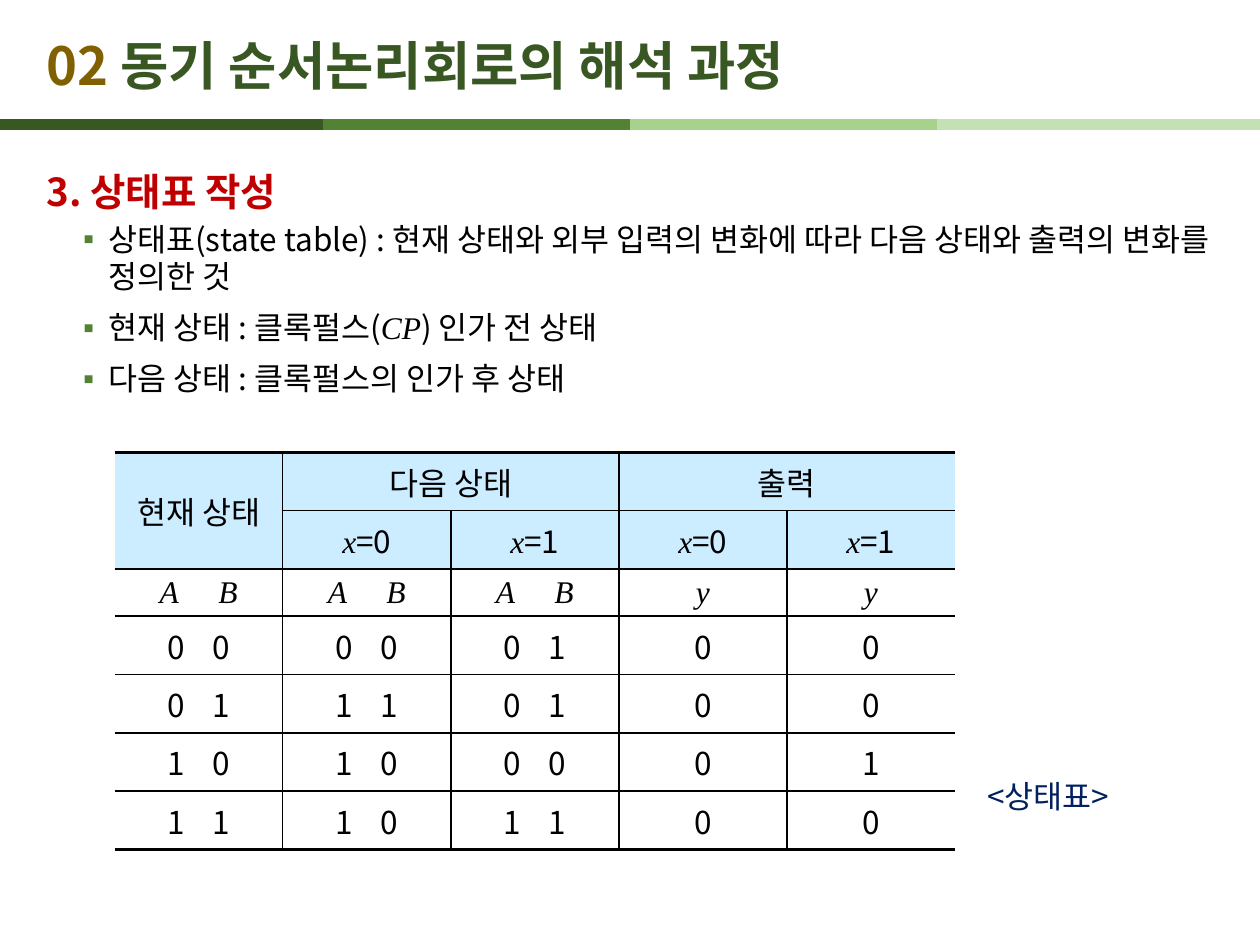
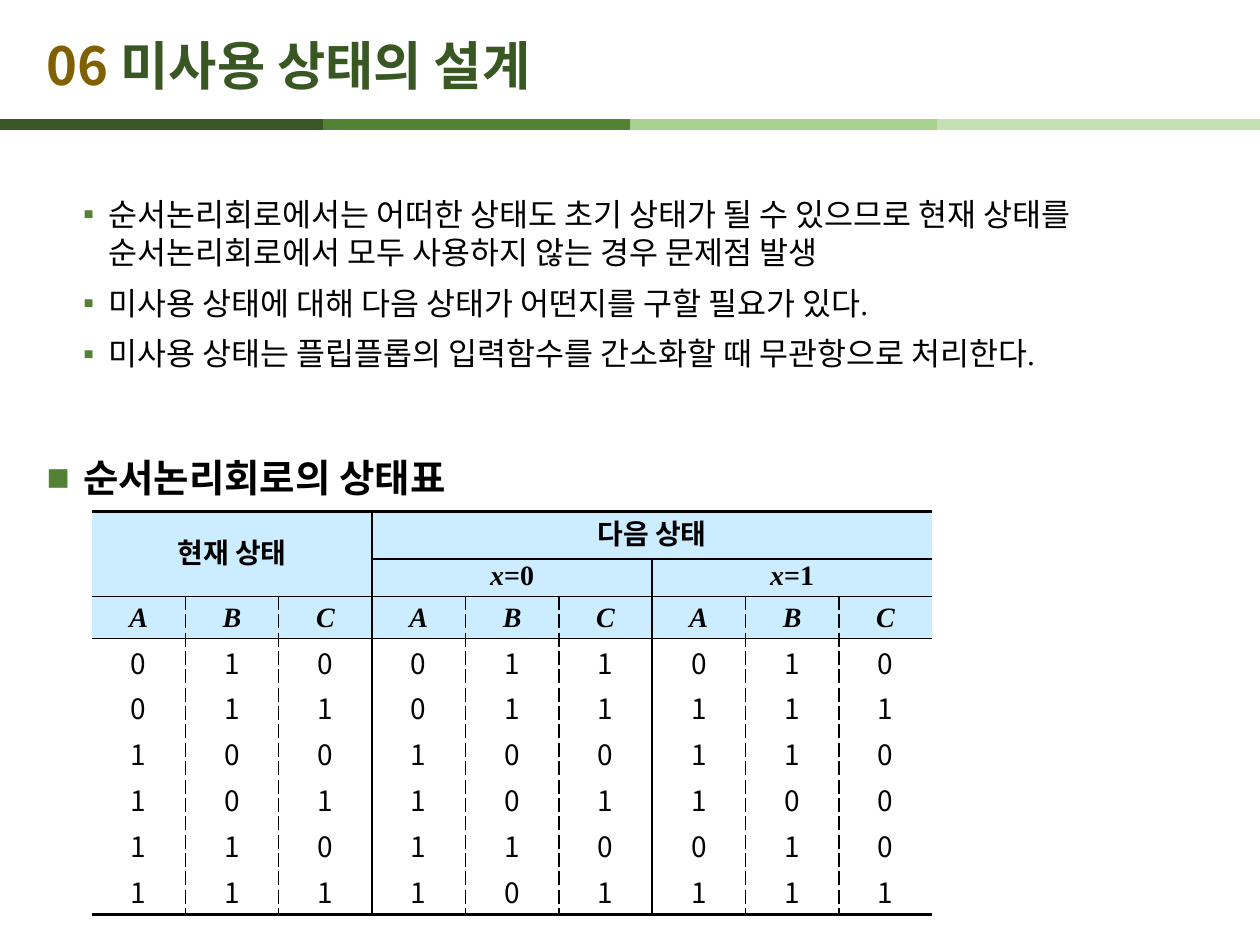
from lxml import etree
from pptx import Presentation, util as u
from pptx.dml.color import RGBColor
from pptx.enum import shapes, text
from pptx.oxml import ns

SANS, SERIF, ARIAL = "Noto Sans CJK KR", "Times New Roman", "Arial"
BLACK, RED, NAVY, BROWN = "000000", "C00000", "002060", "806000"
DARK_GREEN, GREEN, HEADER_BLUE = "385723", "548235", "CCECFF"
BANDS = [(0, DARK_GREEN), (25.6, GREEN), (50, "A9D18E"), (74.4, "C5E0B4")]
COLUMNS, ROWS = 100, 75
HEADING_LINE, ITEM_LINE = 41.5, 21.5


def color(value):
    return RGBColor.from_string(value)


def child(parent, tag, **attributes):
    return etree.SubElement(parent, ns.qn(tag), attributes)


def write(paragraph, content, size=18, ink=BLACK, font=SANS, bold=False, italic=False, gap=0):
    """Add one run; gap is the extra width in points after each character."""
    run = paragraph.add_run()
    run.text = content
    run.font.size, run.font.name = u.Pt(size), font
    run.font.bold, run.font.italic = bold, italic
    run.font.color.rgb = color(ink)
    properties = run.font._element
    if gap:
        properties.set("spc", str(gap * 100))
    child(properties, "a:ea", typeface=SANS)


def write_pair(paragraph, pair, gap, **style):
    first, second = pair
    write(paragraph, first, **style)
    write(paragraph, " ", gap=gap, **style)
    write(paragraph, second, **style)


def write_condition(paragraph, value, font, **style):
    write(paragraph, "x", font=SERIF, italic=True, **style)
    write(paragraph, f"={value}", font=font, **style)


def set_bullet(paragraph, symbol, margin, indent):
    properties = paragraph._p.get_or_add_pPr()
    properties.set("marL", str(u.Inches(margin)))
    properties.set("indent", str(u.Inches(indent)))
    if symbol:
        child(child(properties, "a:buClr"), "a:srgbClr", val=GREEN)
        child(properties, "a:buChar", char=symbol)
    else:
        child(properties, "a:buNone")


def set_border(cell, side, width, dashed=False):
    line = child(cell._tc.get_or_add_tcPr(), f"a:ln{side}", w=str(u.Pt(width)))
    if not width:
        child(line, "a:noFill")
        return
    child(child(line, "a:solidFill"), "a:srgbClr", val=BLACK)
    child(line, "a:prstDash", val="sysDash" if dashed else "solid")


class Deck:
    def __init__(self):
        self.presentation = Presentation()
        self.presentation.slide_width = u.Inches(10)
        self.presentation.slide_height = u.Inches(7.5)
        self.slide = None

    def x(self, columns):
        return round(self.presentation.slide_width * columns / COLUMNS)

    def y(self, rows):
        return round(self.presentation.slide_height * rows / ROWS)

    def place(self, shape, left, top, width, height):
        shape.left, shape.top = self.x(left), self.y(top)
        shape.width, shape.height = self.x(width), self.y(height)

    def start_slide(self, number, title):
        self.slide = self.presentation.slides.add_slide(self.presentation.slide_layouts[1])
        for left, ink in BANDS:
            self.band(left, ink)
        shape = self.slide.shapes.title
        self.place(shape, 2.7, 2.1, 82.7, 6)
        frame = shape.text_frame
        frame.auto_size = text.MSO_AUTO_SIZE.NONE
        frame.vertical_anchor = text.MSO_ANCHOR.MIDDLE
        paragraph = frame.paragraphs[0]
        paragraph.alignment = text.PP_ALIGN.LEFT
        write(paragraph, f"{number} ", size=30, ink=BROWN, bold=True)
        write(paragraph, title, size=30, ink=DARK_GREEN, bold=True)

    def band(self, left, ink):
        line = self.slide.shapes.add_connector(
            shapes.MSO_CONNECTOR.STRAIGHT,
            self.x(left), self.y(9.9), self.x(left + 25.6), self.y(9.9))
        line.line.color.rgb = color(ink)
        line.line.width = u.Pt(6)
        child(line._element.spPr, "a:effectLst")

    def body(self, top_inset=0.05):
        shape = self.slide.placeholders[1]
        self.place(shape, 2.7, 10.7, 94.5, 59.8)
        frame = shape.text_frame
        frame.auto_size = text.MSO_AUTO_SIZE.NONE
        frame.margin_top = u.Inches(top_inset)
        return frame

    def body_paragraph(self, frame, before, after, line):
        first = not frame.paragraphs[0].runs
        paragraph = frame.paragraphs[0] if first else frame.add_paragraph()
        paragraph.space_before = u.Pt(0 if first else before)
        paragraph.space_after = u.Pt(after)
        paragraph.line_spacing = u.Pt(line)
        return paragraph

    def heading(self, frame, content, ink=BLACK, symbol=None, before=0):
        paragraph = self.body_paragraph(frame, before, 0, HEADING_LINE)
        indent = 0.29 if symbol else 0
        set_bullet(paragraph, symbol, indent, -indent)
        write(paragraph, content, size=22, ink=ink, bold=True)

    def item(self, frame, *runs, font=SANS):
        """Add a bulleted line; a run in italics is given as (text, True)."""
        paragraph = self.body_paragraph(frame, 3.6, 4, ITEM_LINE)
        paragraph.level = 1
        set_bullet(paragraph, "▪", 0.49, -0.2)
        for content, italic in runs:
            write(paragraph, content, font=SERIF if italic else font, italic=italic)

    def caption(self, content, *box):
        shape = self.slide.shapes.add_textbox(0, 0, 0, 0)
        self.place(shape, *box)
        frame = shape.text_frame
        frame.word_wrap = True
        paragraph = frame.paragraphs[0]
        paragraph.alignment = text.PP_ALIGN.CENTER
        paragraph.line_spacing = u.Pt(ITEM_LINE)
        write(paragraph, content, ink=NAVY)

    def table(self, left, top, width, column_count, row_heights, merges,
              header_rows, insets, dash_group=1):
        """Add a ruled table; merges are (row, column, last row, last column)."""
        frame = self.slide.shapes.add_table(
            len(row_heights), column_count, self.x(left), self.y(top),
            self.x(width), self.y(sum(row_heights)))
        table = frame.table
        table.first_row = table.horz_banding = False
        for row, height in zip(table.rows, row_heights):
            row.height = self.y(height)
        for row, column, last_row, last_column in merges:
            table.cell(row, column).merge(table.cell(last_row, last_column))
        for row in range(len(row_heights)):
            for column in range(column_count):
                cell = table.cell(row, column)
                if not cell.is_spanned:
                    self.rule_cell(cell, row, column, table, dash_group)
                    self.format_cell(cell, row < header_rows, insets)
        return table

    def rule_cell(self, cell, row, column, table, dash_group):
        right, below = column + cell.span_width, row + cell.span_height
        for side, edge in (("L", column), ("R", right)):
            outer = edge in (0, len(table.columns))
            set_border(cell, side, 0 if outer else 1, edge % dash_group != 0)
        set_border(cell, "T", 1 if row else 2.25)
        set_border(cell, "B", 2.25 if below == len(table.rows) else 1)

    def format_cell(self, cell, header, insets):
        if header:
            cell.fill.solid()
            cell.fill.fore_color.rgb = color(HEADER_BLUE)
        else:
            cell.fill.background()
        cell.vertical_anchor = text.MSO_ANCHOR.MIDDLE
        cell.margin_left = cell.margin_right = u.Inches(insets[0])
        cell.margin_top = cell.margin_bottom = u.Inches(insets[1])
        cell.text_frame.paragraphs[0].alignment = text.PP_ALIGN.CENTER


def add_state_table_slide(deck):
    deck.start_slide("02", "동기 순서논리회로의 해석 과정")
    body = deck.body()
    deck.heading(body, "3. 상태표 작성", ink=RED)
    deck.item(body, ("상태표(state table) : 현재 상태와 외부 입력의 변화에 따라 "
                     "다음 상태와 출력의 변화를 정의한 것", False))
    deck.item(body, ("현재 상태 : 클록펄스(", False), ("CP", True), (") 인가 전 상태", False))
    deck.item(body, ("다음 상태 : 클록펄스의 인가 후 상태", False))

    table = deck.table(9.1, 35.9, 66.7, 5, [4.63, 4.63, 3.74] + [4.63] * 4,
                       [(0, 0, 1, 0), (0, 1, 0, 2), (0, 3, 0, 4)], 2, (0.1, 0.03))

    def paragraph_at(row, column):
        return table.cell(row, column).text_frame.paragraphs[0]

    for column, label in ((0, "현재 상태"), (1, "다음 상태"), (3, "출력")):
        write(paragraph_at(0, column), label, font=SERIF)
    for column in range(1, 5):
        write_condition(paragraph_at(1, column), (column - 1) % 2, SANS)
    for column in range(3):
        write_pair(paragraph_at(2, column), "AB", 18, font=SERIF, italic=True)
    for column in (3, 4):
        write(paragraph_at(2, column), "y", font=SERIF, italic=True)
    states = ["00 00 01 0 0", "01 11 01 0 0", "10 10 00 0 1", "11 10 11 0 0"]
    for row, state in enumerate(states, 3):
        for column, bits in enumerate(state.split()):
            if len(bits) == 2:
                write_pair(paragraph_at(row, column), bits, 12)
            else:
                write(paragraph_at(row, column), bits)
    deck.caption("<상태표>", 77.2, 61.2, 12, 7)


def add_unused_states_slide(deck):
    deck.start_slide("06", "미사용 상태의 설계")
    body = deck.body(top_inset=0.48)
    for sentence in (
            "순서논리회로에서는 어떠한 상태도 초기 상태가 될 수 있으므로 현재 상태를 "
            "순서논리회로에서 모두 사용하지 않는 경우 문제점 발생",
            "미사용 상태에 대해 다음 상태가 어떤지를 구할 필요가 있다.",
            "미사용 상태는 플립플롭의 입력함수를 간소화할 때 무관항으로 처리한다."):
        deck.item(body, (sentence, False), font=SERIF)
    deck.heading(body, "순서논리회로의 상태표", symbol="■", before=27.5)

    table = deck.table(7.3, 40.6, 66.7, 9, [3.75, 3, 3.35, 21.9],
                       [(0, 0, 1, 2), (0, 3, 0, 8), (1, 3, 1, 5), (1, 6, 1, 8)],
                       3, (0.04, 0.02), dash_group=3)

    def header_paragraph(row, column):
        paragraph = table.cell(row, column).text_frame.paragraphs[0]
        paragraph.line_spacing = 0.8
        return paragraph

    for column, label in ((0, "현재 상태"), (3, "다음 상태")):
        write(header_paragraph(0, column), label, size=16, font=ARIAL, bold=True)
    for value, column in enumerate((3, 6)):
        write_condition(header_paragraph(1, column), value, SERIF, size=16, bold=True)
    bit_columns = ["001111", "110011", "010101", "001111", "110010",
                   "110101", "011101", "111011", "010001"]
    for column, bits in enumerate(bit_columns):
        write(table.cell(2, column).text_frame.paragraphs[0], "ABC"[column % 3],
              size=16, font=SERIF, bold=True, italic=True)
        frame = table.cell(3, column).text_frame
        for index, bit in enumerate(bits):
            paragraph = frame.add_paragraph() if index else frame.paragraphs[0]
            paragraph.alignment = text.PP_ALIGN.CENTER
            paragraph.space_before = u.Pt(3.2 if index else 0)
            write(paragraph, bit, size=16)


def main():
    deck = Deck()
    add_state_table_slide(deck)
    add_unused_states_slide(deck)
    deck.presentation.save("out.pptx")


if __name__ == "__main__":
    main()
